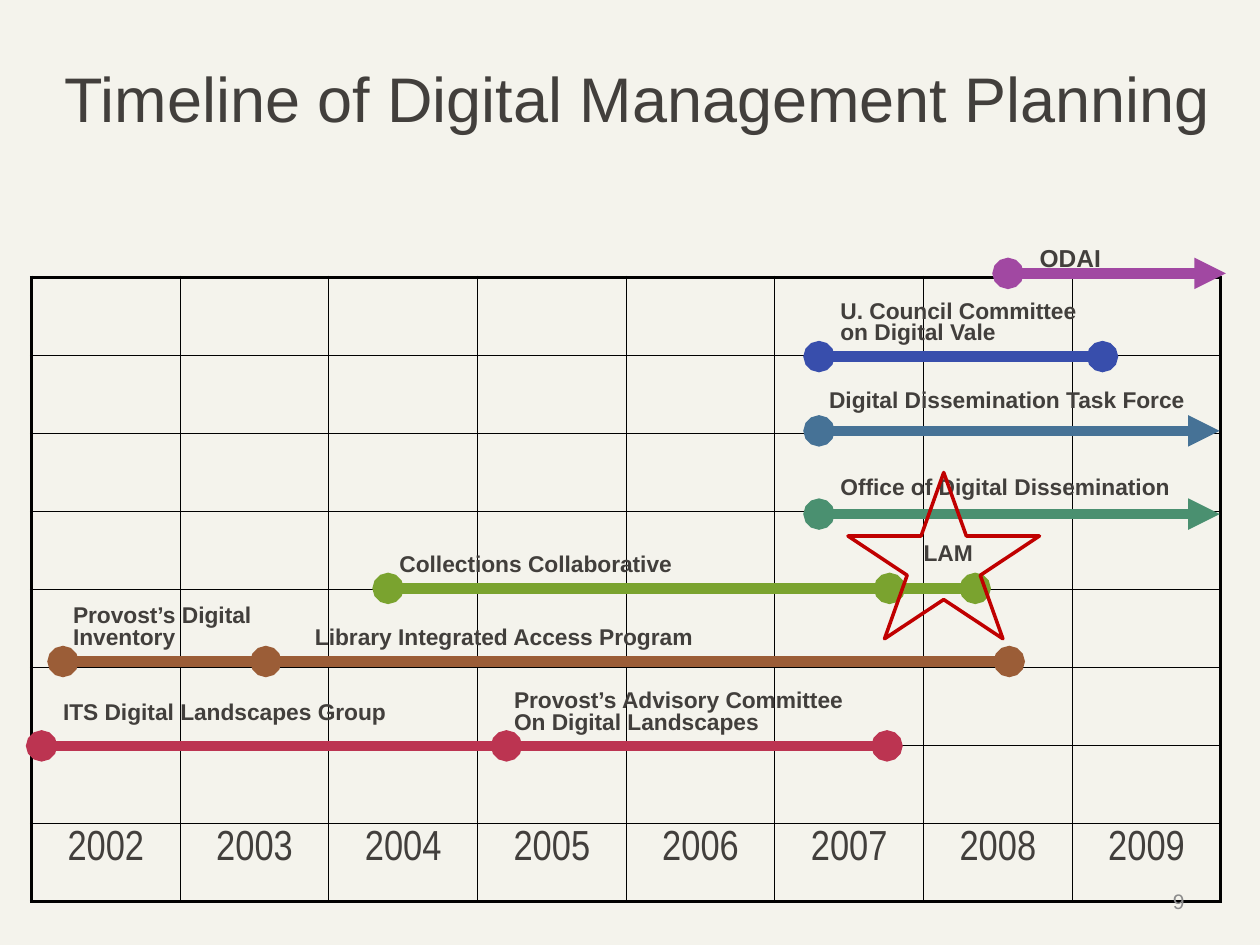
from lxml.etree import SubElement
from pptx import Presentation
from pptx.dml.color import RGBColor
from pptx.enum.shapes import MSO_CONNECTOR, MSO_SHAPE
from pptx.enum.text import MSO_ANCHOR, PP_ALIGN
from pptx.oxml.ns import qn
from pptx.util import Inches, Pt

TEXT = "423F3C"
YEARS = range(2002, 2010)
ROWS = 8
COLUMN_WIDTH, ROW_HEIGHT = 1.18, 0.62

# Bars: start x, end x, y, colour, start marker, end marker
BARS = [
    (0.33, 4.02, 5.92, "BC3451", "oval", "oval"),
    (0.5, 2.11, 5.25, "9B5D37", "oval", "oval"),
    (2.17, 8.01, 5.25, "9B5D37", None, "oval"),
    (4, 7.04, 5.92, "BC3451", None, "oval"),
    (3.08, 7.06, 4.67, "7AA32F", "oval", "oval"),
    (7.06, 7.74, 4.67, "7AA32F", None, "oval"),
    (8, 9.73, 2.17, "A148A2", "oval", "triangle"),
    (6.5, 9.68, 4.08, "4A9070", "oval", "triangle"),
    (6.5, 9.68, 3.42, "467296", "oval", "triangle"),
    (6.5, 8.75, 2.83, "384EAC", "oval", "oval"),
]

# Labels: text (\v breaks a line, \n starts a paragraph), box, size
LABELS = [
    ("ITS Digital Landscapes Group", (0.5, 5.58, 2.75, 0.17), 13),
    ("Provost’s Digital\vInventory", (0.58, 4.83, 1.67, 0.33), 13),
    ("Library Integrated Access Program", (2.5, 5.08, 4, 0.08), 13),
    ("Provost’s Advisory Committee\vOn Digital Landscapes", (4.08, 5.5, 3, 0.33), 13),
    ("Collections Collaborative", (3.17, 4.5, 3.12, 0.08), 13),
    ("LAM", (7.33, 4.33, 0.62, 0.16), 13),
    ("ODAI", (8.25, 2, 0.78, 0.16), 14),
    ("Office of Digital Dissemination", (6.67, 3.75, 2.97, 0.22), 13),
    ("Digital Dissemination Task Force", (6.58, 3.17, 2.92, 0.11), 13),
    ("U. Council Committee\non Digital Vale", (6.67, 2.42, 2.3, 0.32), 13),
]


def color(hex_string):
    return RGBColor.from_string(hex_string)


def write_text(frame, text, size, font="Arial", fill=TEXT, bold=False,
               align=PP_ALIGN.LEFT, spacing=None):
    for index, line in enumerate(text.split("\n")):
        paragraph = frame.add_paragraph() if index else frame.paragraphs[0]
        paragraph.text = line
        paragraph.alignment = align
        paragraph.line_spacing = spacing
        for run in paragraph.runs:
            run.font.size = Pt(size)
            run.font.name = font
            run.font.bold = bold
            run.font.color.rgb = color(fill)


def set_frame(frame, anchor, margins):
    frame.word_wrap = True
    frame.vertical_anchor = anchor
    (frame.margin_left, frame.margin_top,
     frame.margin_right, frame.margin_bottom) = map(Inches, margins)


def add_text(slide, text, box, size, anchor=MSO_ANCHOR.BOTTOM,
             margins=(0, 0, 0, 0), **text_format):
    shape = slide.shapes.add_textbox(*map(Inches, box))
    set_frame(shape.text_frame, anchor, margins)
    write_text(shape.text_frame, text, size, **text_format)


def add_title(slide, text):
    title = slide.shapes.title
    title.left, title.top, title.width, title.height = map(
        Inches, (0.33, 0.42, 9.39, 0.7))
    set_frame(title.text_frame, MSO_ANCHOR.MIDDLE, (0.07, 0.04, 0, 0.04))
    write_text(title.text_frame, text, 36, align=PP_ALIGN.CENTER)


def set_borders(cell, outer_sides):
    properties = cell._tc.get_or_add_tcPr()
    for side in "LRTB":
        width = 2 if side in outer_sides else 0.75
        line = SubElement(properties, qn("a:ln" + side), w=str(Pt(width)))
        fill = SubElement(line, qn("a:solidFill"))
        SubElement(fill, qn("a:srgbClr"), val="000000")


def add_year_grid(slide):
    count = len(YEARS)
    table = slide.shapes.add_table(
        ROWS, count, Inches(0.25), Inches(2.2),
        Inches(COLUMN_WIDTH * count), Inches(ROW_HEIGHT * ROWS)).table
    table.first_row = table.horz_banding = False
    for column in table.columns:
        column.width = Inches(COLUMN_WIDTH)
    for row_index, row in enumerate(table.rows):
        row.height = Inches(ROW_HEIGHT)
        for column_index, cell in enumerate(row.cells):
            edges = {"L": column_index == 0, "R": column_index == count - 1,
                     "T": row_index == 0, "B": row_index == ROWS - 1}
            set_borders(cell, [side for side in edges if edges[side]])
            cell.fill.background()
            if edges["B"]:
                cell.margin_left = cell.margin_right = Inches(0.05)
                cell.margin_top = cell.margin_bottom = Inches(0.05)
                write_text(cell.text_frame, str(YEARS[column_index]), 24,
                           font="Arial Narrow", align=PP_ALIGN.CENTER)


def add_bar(slide, start, end, y, fill, start_marker, end_marker):
    bar = slide.shapes.add_connector(
        MSO_CONNECTOR.STRAIGHT, Inches(start), Inches(y), Inches(end), Inches(y))
    bar.line.color.rgb = color(fill)
    bar.line.width = Pt(6)
    line = bar.line._get_or_add_ln()
    for tag, marker in (("a:headEnd", start_marker), ("a:tailEnd", end_marker)):
        if marker:
            SubElement(line, qn(tag), type=marker)
    SubElement(bar._element.spPr, qn("a:effectLst"))


def add_star(slide):
    star = slide.shapes.add_shape(
        MSO_SHAPE.STAR_5_POINT, *map(Inches, (6.73, 3.75, 1.52, 1.32)))
    star.shadow.inherit = False
    star.fill.background()
    star.line.color.rgb = color("C00000")
    star.line.width = Pt(2)


def main():
    presentation = Presentation()
    presentation.slide_width, presentation.slide_height = Inches(10), Inches(7.5)
    slide = presentation.slides.add_slide(presentation.slide_layouts[5])
    slide.background.fill.solid()
    slide.background.fill.fore_color.rgb = color("F4F3EC")

    add_title(slide, "Timeline of Digital Management Planning")
    add_year_grid(slide)

    # Projects
    for bar in BARS:
        add_bar(slide, *bar)
    for text, box, size in LABELS:
        add_text(slide, text, box, size, bold=True, spacing=0.8)

    # Page number and highlight
    add_text(slide, "9", (7.17, 6.95, 2.33, 0.4), 12, anchor=MSO_ANCHOR.MIDDLE,
             margins=(0.1, 0.05, 0.1, 0.05), fill="8C8C8C", align=PP_ALIGN.RIGHT)
    add_star(slide)

    presentation.save("out.pptx")


if __name__ == "__main__":
    main()
